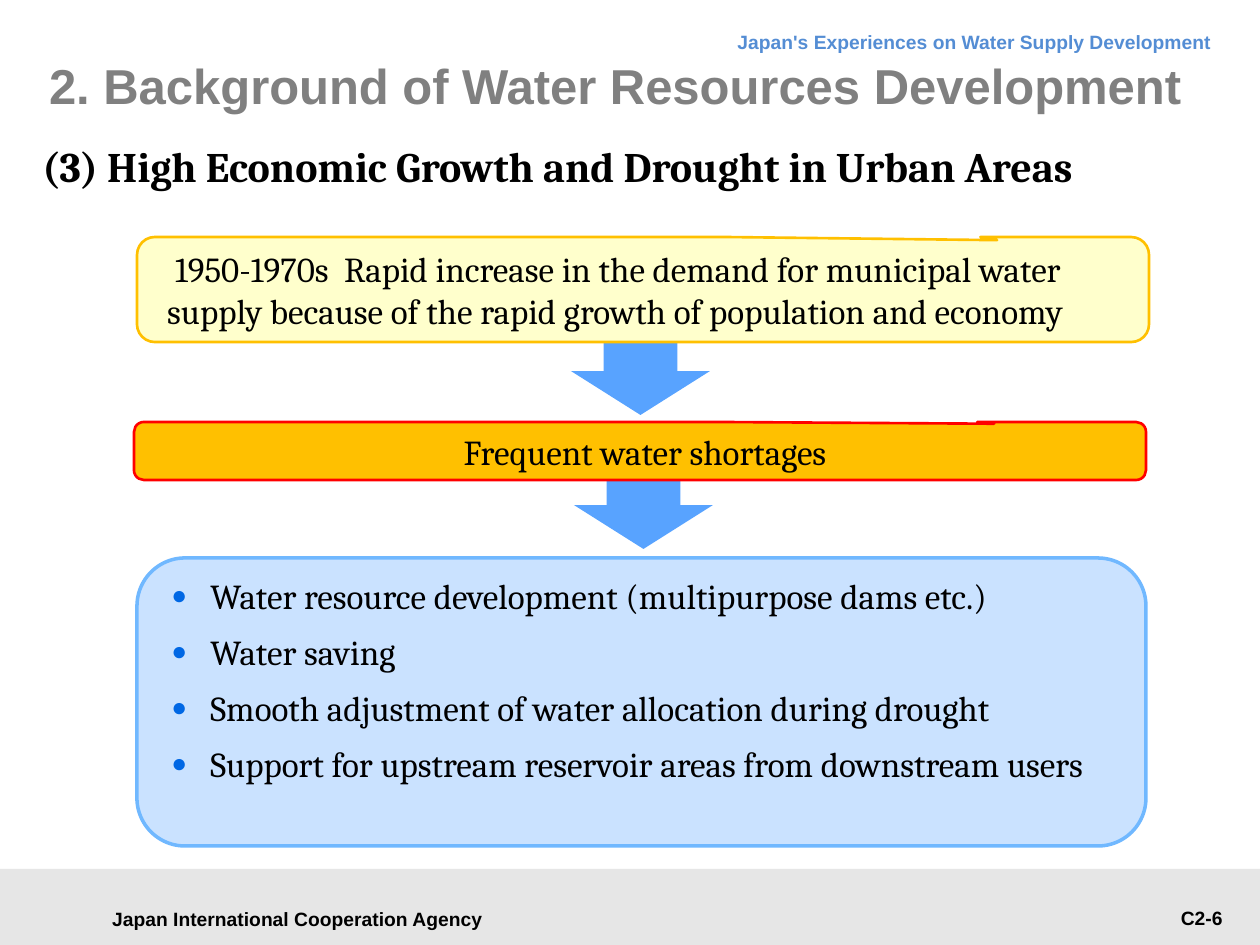
import pptx
import pptx.util
import pptx.dml.color
import pptx.enum.shapes
import pptx.enum.text
import pptx.oxml
import pptx.oxml.ns

SCALE = 914400 / 126  # EMU in one px
KIND = pptx.enum.shapes.MSO_SHAPE
ALIGN = pptx.enum.text.PP_ALIGN
ANCHOR = pptx.enum.text.MSO_ANCHOR
Pt = pptx.util.Pt


def px(n):
    return pptx.util.Emu(round(n * SCALE))


def tint(code):
    return pptx.dml.color.RGBColor.from_string(code)


def style(para, size, face, color="000000", bold=False, align=ALIGN.LEFT):
    para.alignment = align
    for run in para.runs:
        font = run.font
        font.size, font.name, font.bold = Pt(size), face, bold
        font.color.rgb = tint(color)


def margins(frame, left, top, right, bottom):
    frame.margin_left, frame.margin_top = px(left), px(top)
    frame.margin_right, frame.margin_bottom = px(right), px(bottom)


def label(slide, box, text, size, face="Arial", color="000000",
          align=ALIGN.LEFT, anchor=ANCHOR.TOP):
    frame = slide.shapes.add_textbox(*map(px, box)).text_frame
    frame.word_wrap = True
    frame.vertical_anchor = anchor
    frame.text = text
    style(frame.paragraphs[0], size, face, color, True, align)
    return frame


def shape(slide, kind, box, fill, line=None, width=1.5, adjust=()):
    item = slide.shapes.add_shape(kind, *map(px, box))
    item.shadow.inherit = False
    item.fill.solid()
    item.fill.fore_color.rgb = tint(fill)
    if line:
        item.line.color.rgb = tint(line)
        item.line.width = Pt(width)
    else:
        item.line.fill.background()
    for i, value in enumerate(adjust):
        item.adjustments[i] = value
    return item


def arrow(slide, left, top):
    shape(slide, KIND.DOWN_ARROW, (left, top, 139, 77), "58A3FF",
          adjust=(0.53, 0.57))


def callout(slide, box, fill, line, text, align):
    item = shape(slide, KIND.ROUNDED_RECTANGULAR_CALLOUT, box, fill, line,
                 adjust=(0.35, -0.47, 0.17))
    frame = item.text_frame
    frame.word_wrap = True
    frame.vertical_anchor = ANCHOR.MIDDLE
    margins(frame, 25, 5, 15, 5)
    frame.text = text
    style(frame.paragraphs[0], 20, "Cambria", align=align)
    return frame.paragraphs[0]


def indent(para, left, first):
    props = para._p.get_or_add_pPr()
    props.set("marL", str(px(left)))
    props.set("indent", str(px(first)))
    return props


def bullet(para):
    props = indent(para, 47, -39)
    space = pptx.oxml.ns.nsdecls("a")
    for part in ('<a:buClr %s><a:srgbClr val="0067E4"/></a:buClr>',
                 '<a:buSzPct %s val="75000"/>',
                 '<a:buFont %s typeface="Arial"/>',
                 '<a:buChar %s char="●"/>'):
        props.append(pptx.oxml.parse_xml(part % space))


def panel(slide, box, items):
    item = shape(slide, KIND.ROUNDED_RECTANGLE, box, "CAE2FF", "70B8FF", 2)
    frame = item.text_frame
    frame.word_wrap = True
    frame.vertical_anchor = ANCHOR.TOP
    for i, text in enumerate(items):
        para = frame.add_paragraph() if i else frame.paragraphs[0]
        para.text = text
        bullet(para)
        para.line_spacing = Pt(22)
        para.space_before = Pt(10 if i else 0)
        style(para, 20, "Cambria")


def main():
    deck = pptx.Presentation()
    deck.slide_width, deck.slide_height = px(1260), px(945)
    slide = deck.slides.add_slide(deck.slide_layouts[6])

    # Footer band and running header
    shape(slide, KIND.RECTANGLE, (0, 869, 1260, 76), "E6E6E6")
    label(slide, (89, 897, 417, 43), "Japan International Cooperation Agency",
          11, align=ALIGN.CENTER, anchor=ANCHOR.MIDDLE)
    head = label(slide, (343, 16, 881, 48),
                 "Japan's Experiences on Water Supply Development", 11,
                 color="548DD4", align=ALIGN.RIGHT)
    head.paragraphs[0].line_spacing = Pt(18)
    label(slide, (1037, 900, 198, 37), "C2-6", 11, align=ALIGN.RIGHT)

    # Title and heading
    title = label(slide, (49, 35, 1152, 100),
                  "2. Background of Water Resources Development", 28,
                  color="808080", anchor=ANCHOR.MIDDLE)
    margins(title, 0, 0, 0, 0)
    label(slide, (30, 134, 1191, 63),
          "(3) High Economic Growth and Drought in Urban Areas", 24, "Cambria")

    # Flow from cause to shortage to measures
    arrow(slide, 574, 472)
    arrow(slide, 571, 338)
    cause = callout(
        slide, (137, 237, 1012, 105), "FFFFCC", "FFC000",
        "1950-1970s  Rapid increase in the demand for municipal water "
        "supply because of the rapid growth of population and economy",
        ALIGN.LEFT)
    indent(cause, 0, 8)
    callout(slide, (134, 422, 1012, 58), "FFC000", "FF0000",
            "Frequent water shortages", ALIGN.CENTER)
    panel(slide, (137, 558, 1009, 288), (
        "Water resource development (multipurpose dams etc.)",
        "Water saving",
        "Smooth adjustment of water allocation during drought",
        "Support for upstream reservoir areas from downstream users"))

    deck.save("out.pptx")


if __name__ == "__main__":
    main()
